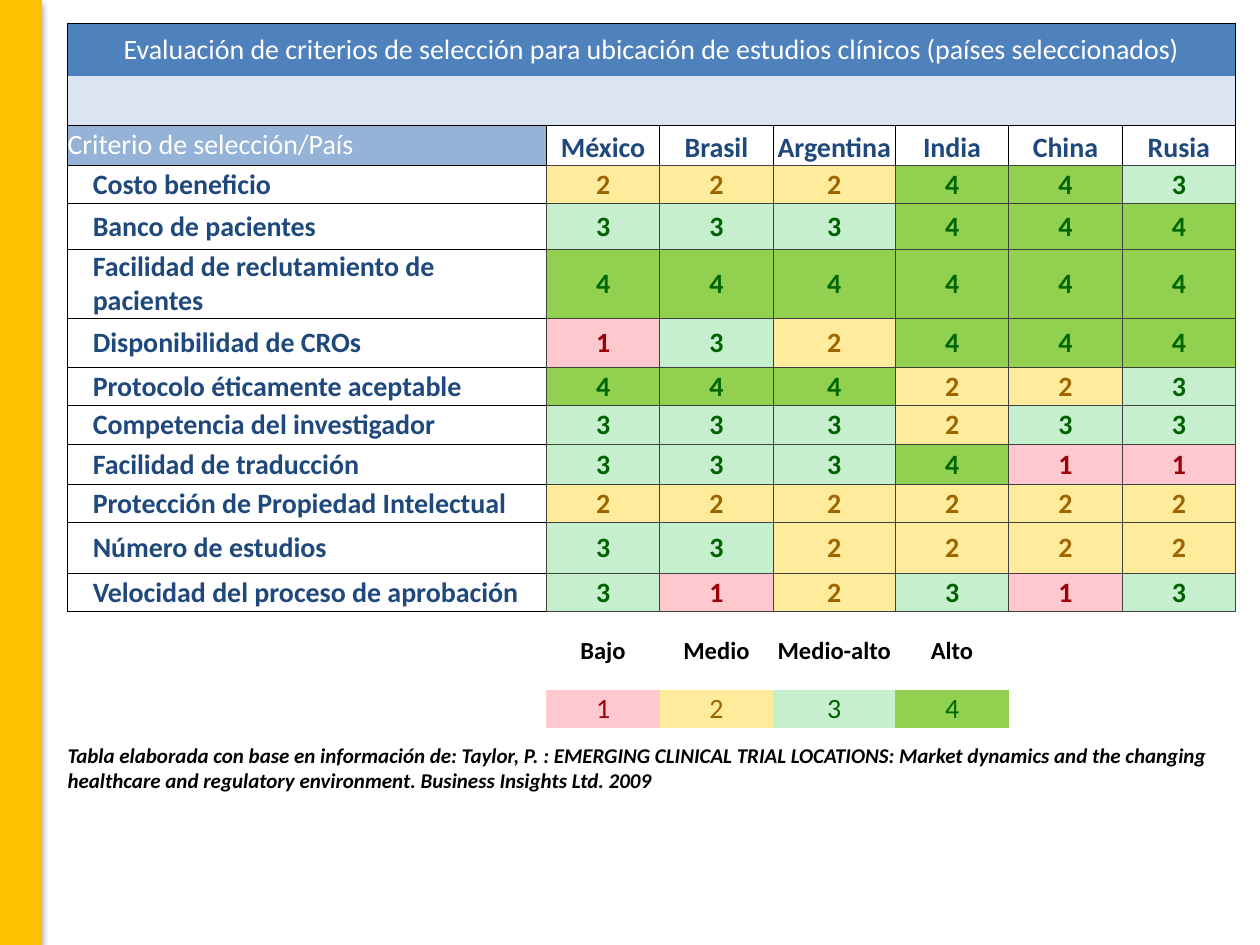
from dataclasses import dataclass
from lxml.etree import SubElement
from pptx import Presentation
from pptx.dml.color import RGBColor
from pptx.enum.shapes import MSO_SHAPE
from pptx.enum.text import MSO_ANCHOR, PP_ALIGN
from pptx.oxml import parse_xml
from pptx.oxml.ns import nsdecls, qn
from pptx.util import Pt


@dataclass(frozen=True)
class Theme:
    font: str = "Calibri"
    body: int = 16
    legend: int = 14
    source: int = 12
    bar: str = "FFC000"
    title: str = "4F81BD"
    spacer: str = "DBE5F1"
    header: str = "95B3D7"
    navy: str = "1F497D"
    white: str = "FFFFFF"
    black: str = "000000"
    grid: str = "3F3F3F"


theme = Theme()
score_colors = {
    1: ("9C0006", "FFC7CE"),
    2: ("9C6500", "FFEB9C"),
    3: ("006100", "C6EFCE"),
    4: ("006600", "92D050"),
}
countries = ["México", "Brasil", "Argentina", "India", "China", "Rusia"]
criteria = [
    ("Costo beneficio", [2, 2, 2, 4, 4, 3]),
    ("Banco de pacientes", [3, 3, 3, 4, 4, 4]),
    ("Facilidad de reclutamiento de pacientes", [4, 4, 4, 4, 4, 4]),
    ("Disponibilidad de CROs", [1, 3, 2, 4, 4, 4]),
    ("Protocolo éticamente aceptable", [4, 4, 4, 2, 2, 3]),
    ("Competencia del investigador", [3, 3, 3, 2, 3, 3]),
    ("Facilidad de traducción", [3, 3, 3, 4, 1, 1]),
    ("Protección de Propiedad Intelectual", [2, 2, 2, 2, 2, 2]),
    ("Número de estudios", [3, 3, 2, 2, 2, 2]),
    ("Velocidad del proceso de aprobación", [3, 1, 2, 3, 1, 3]),
]
levels = ["Bajo", "Medio", "Medio-alto", "Alto"]
column_widths = [273.6, 64.8, 64.8, 69.84, 64.8, 64.8, 64.8]
row_heights = [30.2, 28.1, 23, 21.8, 26.3, 39.3, 28.1, 21.8,
               22.3, 22.8, 21.8, 29.2, 21.8, 44.6, 21.8, 46.8]

presentation = Presentation()
presentation.slide_width, presentation.slide_height = Pt(720), Pt(540)
slide = presentation.slides.add_slide(presentation.slide_layouts[6])

side_bar = slide.shapes.add_shape(MSO_SHAPE.RECTANGLE, 0, 0, Pt(24), Pt(540))
side_bar.fill.solid()
side_bar.fill.fore_color.rgb = RGBColor.from_string(theme.bar)
side_bar.line.fill.background()
side_bar.shadow.inherit = False
effects = side_bar._element.spPr.find(qn("a:effectLst"))
effects.append(parse_xml(
    f'<a:outerShdw {nsdecls("a")} blurRad="{Pt(3.1)}" dist="{Pt(1.8)}" dir="5400000" rotWithShape="0">'
    f'<a:srgbClr val="{theme.black}"><a:alpha val="35000"/></a:srgbClr></a:outerShdw>'))

evaluation = slide.shapes.add_table(
    len(row_heights), len(column_widths), Pt(38.6), Pt(13.2),
    Pt(sum(column_widths)), Pt(sum(row_heights))).table
evaluation.first_row = evaluation.horz_banding = False
for column, width in zip(evaluation.columns, column_widths):
    column.width = Pt(width)
for row, height in zip(evaluation.rows, row_heights):
    row.height = Pt(height)


def style_cell(cell, fill=None, **edges):
    cell.margin_left = cell.margin_right = cell.margin_top = cell.margin_bottom = 0
    cell.vertical_anchor = MSO_ANCHOR.MIDDLE
    properties = cell._tc.get_or_add_tcPr()
    for side in "LRTB":
        border = SubElement(properties, qn(f"a:ln{side}"), w=str(Pt(0.5)))
        if side in edges:
            paint = SubElement(border, qn("a:solidFill"))
            SubElement(paint, qn("a:srgbClr"), val=edges[side])
        else:
            SubElement(border, qn("a:noFill"))
    if fill:
        cell.fill.solid()
        cell.fill.fore_color.rgb = RGBColor.from_string(fill)
    else:
        cell.fill.background()
    ending = cell.text_frame.paragraphs[0]._p.get_or_add_endParaRPr()
    ending.set("sz", str(theme.source * 100))


def write(cell, text, color, size=theme.body, bold=False, italic=False, align=PP_ALIGN.CENTER):
    paragraph = cell.text_frame.paragraphs[0]
    paragraph.alignment = align
    run = paragraph.add_run()
    run.text = str(text)
    run.font.name = theme.font
    run.font.size = Pt(size)
    run.font.bold = bold
    run.font.italic = italic
    run.font.color.rgb = RGBColor.from_string(color)


black_box = dict.fromkeys("LRTB", theme.black)
grid_box = dict.fromkeys("LRTB", theme.grid)
last_column = len(countries)
legend_row = 3 + len(criteria)
source_row = legend_row + 2

for col in range(last_column + 1):
    sides = {"L": theme.black} if col == 0 else {"R": theme.black} if col == last_column else {}
    title_sides = {"L": theme.black, "R": theme.black} if col == 0 else sides
    style_cell(evaluation.cell(0, col), theme.title, T=theme.black, **title_sides)
    style_cell(evaluation.cell(1, col), theme.spacer, B=theme.black, **sides)
    style_cell(evaluation.cell(legend_row, col), T=theme.grid if col else theme.black)
    level_fill = score_colors[col][1] if col in score_colors else None
    style_cell(evaluation.cell(legend_row + 1, col), level_fill)
    style_cell(evaluation.cell(source_row, col))

for full_row in (0, source_row):
    evaluation.cell(full_row, 0).merge(evaluation.cell(full_row, last_column))
write(evaluation.cell(0, 0),
      "Evaluación de criterios de selección para ubicación de estudios clínicos (países seleccionados)",
      theme.white)

corner = evaluation.cell(2, 0)
style_cell(corner, theme.header, **black_box)
write(corner, "Criterio de selección/País", theme.white, align=PP_ALIGN.LEFT)
for col, country in enumerate(countries, 1):
    heading = evaluation.cell(2, col)
    style_cell(heading, **{**black_box, "B": theme.grid})
    heading.vertical_anchor = MSO_ANCHOR.BOTTOM
    write(heading, country, theme.navy, bold=True)

for row, (criterion, scores) in enumerate(criteria, 3):
    label = evaluation.cell(row, 0)
    style_cell(label, **{**black_box, "R": theme.grid})
    write(label, criterion, theme.navy, bold=True, align=PP_ALIGN.LEFT)
    label.text_frame.paragraphs[0]._p.get_or_add_pPr().set("marL", str(Pt(14.4)))
    for col, score in enumerate(scores, 1):
        ink, fill = score_colors[score]
        rating = evaluation.cell(row, col)
        style_cell(rating, fill, **grid_box)
        write(rating, score, ink, bold=True)

for score, level in enumerate(levels, 1):
    write(evaluation.cell(legend_row, score), level, theme.black, theme.legend, bold=True)
    write(evaluation.cell(legend_row + 1, score), score, score_colors[score][0])

write(evaluation.cell(source_row, 0),
      "Tabla elaborada con base en información de: Taylor, P. : EMERGING CLINICAL TRIAL LOCATIONS: "
      "Market dynamics and the changing healthcare and regulatory environment. Business Insights Ltd. 2009",
      theme.black, theme.source, bold=True, italic=True, align=PP_ALIGN.LEFT)

presentation.save("out.pptx")
